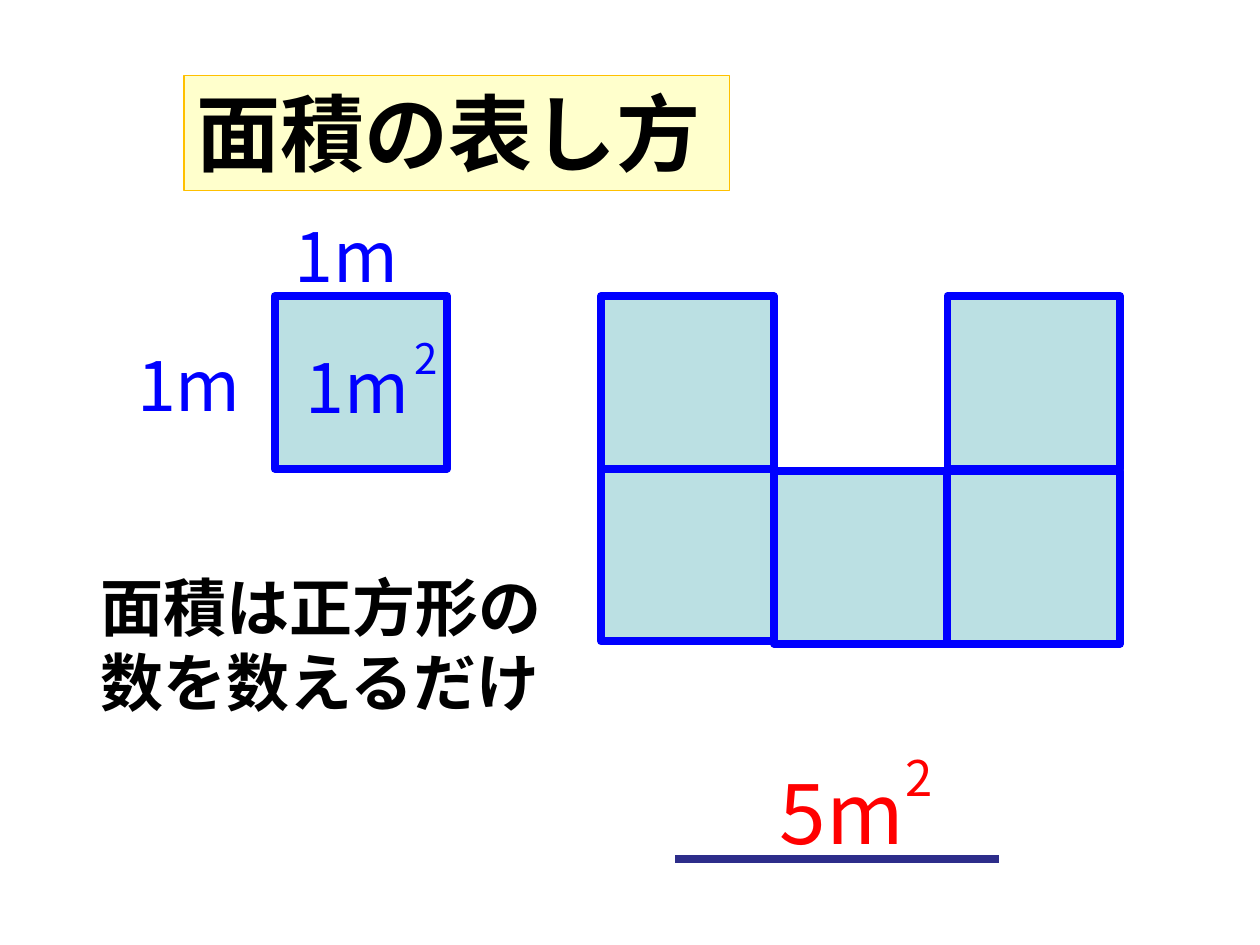
from dataclasses import dataclass

from lxml import etree
from pptx import Presentation
from pptx.dml.color import RGBColor
from pptx.enum.shapes import MSO_CONNECTOR, MSO_SHAPE
from pptx.enum.text import MSO_ANCHOR, MSO_AUTO_SIZE, PP_ALIGN
from pptx.oxml.ns import qn
from pptx.util import Inches, Pt

RECT = MSO_SHAPE.RECTANGLE
STRAIGHT = MSO_CONNECTOR.STRAIGHT
GROW = MSO_AUTO_SIZE.SHAPE_TO_FIT_TEXT
TOP = MSO_ANCHOR.TOP
LEFT = PP_ALIGN.LEFT


@dataclass(frozen=True)
class Theme:
    font: str = "Noto Sans CJK JP"
    black: str = "000000"
    blue: str = "0000FF"
    red: str = "FF0000"
    navy: str = "2D2D8A"
    tile: str = "BBE0E3"
    cream: str = "FFFFCC"
    gold: str = "FFC000"
    title: int = 48
    answer: int = 48
    label: int = 40
    body: int = 36
    answer_power: int = 28
    label_power: int = 24
    thick: float = 4.5
    thin: float = 0.75


@dataclass(frozen=True)
class Label:
    text: str
    left: float
    top: float
    width: float
    height: float
    size: int
    color: str
    bold: bool = False


THEME = Theme()
SIDE = 1.37
UNIT_LEFT, UPPER_TOP = 2.18, 2.35
GRID_LEFT, GRID_PITCH = 4.77, 1.375
LEFT_LOWER_TOP, LOWER_TOP = 3.72, 3.74

TILES = [
    (UNIT_LEFT, UPPER_TOP),
    (GRID_LEFT, LEFT_LOWER_TOP),
    (GRID_LEFT, UPPER_TOP),
    (GRID_LEFT + 2 * GRID_PITCH, UPPER_TOP),
    (GRID_LEFT + GRID_PITCH, LOWER_TOP),
    (GRID_LEFT + 2 * GRID_PITCH, LOWER_TOP),
]
TITLE = Label("面積の表し方", 1.46, 0.6, 4.33, 0.91, THEME.title, THEME.black, True)
LABELS = [
    Label("1m", 0.99, 2.66, 1.25, 0.77, THEME.label, THEME.blue),
    Label("1m", 2.24, 1.64, 1.36, 0.77, THEME.label, THEME.blue),
    Label("1m", 2.33, 2.68, 1.25, 0.77, THEME.label, THEME.blue),
    Label("2", 3.19, 2.59, 0.59, 0.5, THEME.label_power, THEME.blue),
    Label("5m", 6.09, 5.99, 1.76, 0.91, THEME.answer, THEME.red),
    Label("2", 7.09, 5.88, 0.59, 0.57, THEME.answer_power, THEME.red),
    Label("面積は正方形の数を数えるだけ", 0.7, 4.46, 3.92, 1.31,
          THEME.body, THEME.black, True),
]


def rgb(color: str) -> RGBColor:
    return RGBColor.from_string(color)


def add_box(s, left: float, top: float, width: float, height: float,
            fill: str, line: str, weight: float):
    sp = s.shapes.add_shape(RECT, Inches(left), Inches(top), Inches(width), Inches(height))
    sp.shadow.inherit = False
    sp.fill.solid()
    sp.fill.fore_color.rgb = rgb(fill)
    sp.line.color.rgb = rgb(line)
    sp.line.width = Pt(weight)
    return sp


def write_text(sp, label: Label) -> None:
    tf = sp.text_frame
    tf.text = label.text
    tf.word_wrap = True
    tf.auto_size = GROW
    tf.vertical_anchor = TOP
    p = tf.paragraphs[0]
    p.alignment = LEFT
    r = p.runs[0]
    r.font.name = THEME.font
    r.font.size = Pt(label.size)
    r.font.bold = label.bold
    r.font.color.rgb = rgb(label.color)
    etree.SubElement(r.font._element, qn("a:ea"), typeface=THEME.font)


def add_label(s, label: Label) -> None:
    sp = s.shapes.add_textbox(Inches(label.left), Inches(label.top),
                              Inches(label.width), Inches(label.height))
    write_text(sp, label)


def add_title(s, label: Label) -> None:
    sp = add_box(s, label.left, label.top, label.width, label.height,
                 THEME.cream, THEME.gold, THEME.thin)
    write_text(sp, label)


def add_underline(s, left: float, right: float, y: float) -> None:
    line = s.shapes.add_connector(STRAIGHT, Inches(left), Inches(y), Inches(right), Inches(y))
    line.line.color.rgb = rgb(THEME.navy)
    line.line.width = Pt(THEME.thick)
    etree.SubElement(line._element.spPr, qn("a:effectLst"))


def main() -> None:
    prs = Presentation()
    prs.slide_width, prs.slide_height = Inches(10), Inches(7.5)
    s = prs.slides.add_slide(prs.slide_layouts[6])
    for left, top in TILES:
        add_box(s, left, top, SIDE, SIDE, THEME.tile, THEME.blue, THEME.thick)
    for label in LABELS:
        add_label(s, label)
    add_title(s, TITLE)
    add_underline(s, 5.36, 7.93, 6.82)
    prs.save("out.pptx")


if __name__ == "__main__":
    main()
